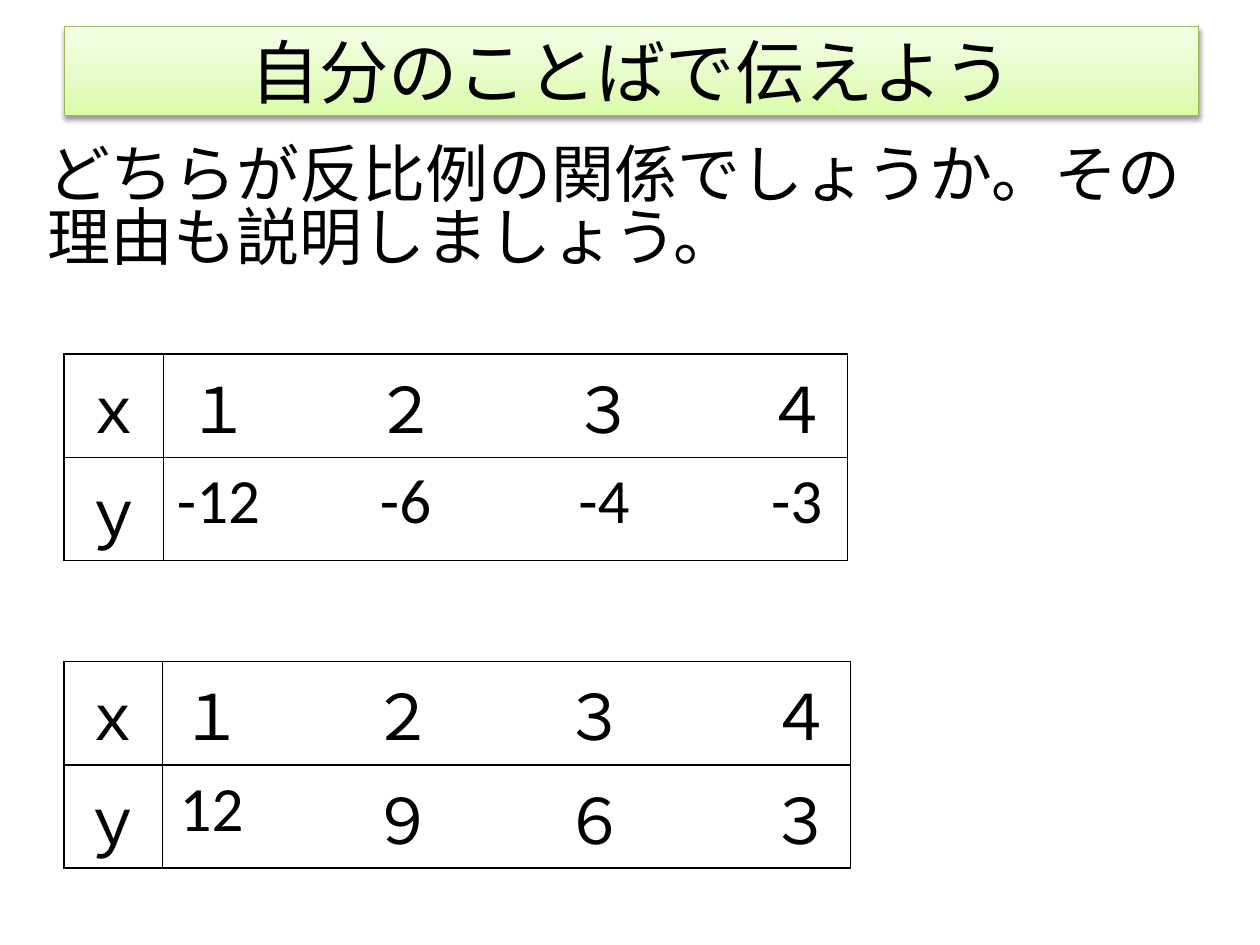
"""Build a slide that asks which of two tables shows inverse proportion."""
from dataclasses import dataclass

from lxml.etree import SubElement
from pptx import Presentation
from pptx.dml.color import RGBColor
from pptx.enum.text import MSO_ANCHOR, PP_ALIGN
from pptx.oxml.ns import qn
from pptx.util import Inches, Pt

BLACK = "000000"
WHITE = "FFFFFF"
ROW_HEIGHT = 0.82


@dataclass
class ValueTable:
    top: float
    widths: list[float]
    y_values: list[str]


TABLES = [
    ValueTable(2.81, [0.79, 0.87, 0.69, 0.72, 0.81, 0.81, 0.72, 0.81],
               ["-12", "-6", "-4", "-3"]),
    ValueTable(5.25, [0.78, 0.78, 0.78, 0.7, 0.78, 0.78, 0.86, 0.78],
               ["12", "９", "６", "３"]),
]


def rgb(color: str) -> RGBColor:
    return RGBColor.from_string(color)


def write(frame, text: str, *, size: float = 36, align=PP_ALIGN.CENTER,
          spacing: float = 1.0) -> None:
    paragraph = frame.paragraphs[0]
    paragraph.alignment = align
    paragraph.line_spacing = spacing
    run = paragraph.add_run()
    run.text = text
    run.font.size = Pt(size)
    run.font.name = "Calibri"
    run.font.color.rgb = rgb(BLACK)


def place(shape, left: float, top: float, width: float, height: float) -> None:
    shape.left, shape.top = Inches(left), Inches(top)
    shape.width, shape.height = Inches(width), Inches(height)


def add_color(parent, color: str):
    return SubElement(parent, qn("a:srgbClr"), val=color)


def style_banner(banner) -> None:
    banner.fill.gradient()
    banner.fill.gradient_angle = 90
    banner.line.color.rgb = rgb("98B955")
    banner.line.width = Pt(0.75)
    properties = banner._element.spPr
    stops = properties.find(".//" + qn("a:gsLst"))
    for stop in list(stops):
        stops.remove(stop)
    for percent, color in ((0, "DAFDA7"), (35, "E4FCC2"), (100, "F5FFE7")):
        add_color(SubElement(stops, qn("a:gs"), pos=str(percent * 1000)), color)
    effects = SubElement(properties, qn("a:effectLst"))
    shadow = SubElement(effects, qn("a:outerShdw"), blurRad=str(Pt(3.1)),
                        dist=str(Pt(1.6)), dir="5400000", rotWithShape="0")
    SubElement(add_color(shadow, BLACK), qn("a:alpha"), val="38000")


def style_cell(cell, column: int, last: int) -> None:
    visible = {"L": column <= 1, "R": column in (0, last), "T": True, "B": True}
    properties = cell._tc.get_or_add_tcPr()
    for side, shown in visible.items():
        border = SubElement(properties, qn(f"a:ln{side}"), w=str(Pt(1)))
        if shown:
            add_color(SubElement(border, qn("a:solidFill")), BLACK)
        else:
            SubElement(border, qn("a:noFill"))
    cell.fill.solid()
    cell.fill.fore_color.rgb = rgb(WHITE)


def add_value_table(slide, values: ValueTable) -> None:
    rows = [["ｘ", "１", "２", "３", "４"], ["ｙ", *values.y_values]]
    last = len(values.widths) - 1
    table = slide.shapes.add_table(
        len(rows), len(values.widths), Inches(0.51), Inches(values.top),
        Inches(sum(values.widths)), Inches(ROW_HEIGHT * len(rows))).table
    table.first_row = table.horz_banding = False
    for column, width in zip(table.columns, values.widths):
        column.width = Inches(width)
    for row, (label, *numbers) in enumerate(rows):
        table.rows[row].height = Inches(ROW_HEIGHT)
        for column in range(last + 1):
            style_cell(table.cell(row, column), column, last)
        write(table.cell(row, 0).text_frame, label)
        for index, number in enumerate(numbers):
            write(table.cell(row, 2 * index + 1).text_frame, number)


def main() -> None:
    presentation = Presentation()
    presentation.slide_width, presentation.slide_height = Inches(10), Inches(7.5)
    slide = presentation.slides.add_slide(presentation.slide_layouts[5])

    title = slide.shapes.title
    place(title, 0.51, 0.21, 9, 0.71)
    style_banner(title)
    title.text_frame.vertical_anchor = MSO_ANCHOR.MIDDLE
    write(title.text_frame, "自分のことばで伝えよう", size=39.6)

    question = slide.shapes.add_textbox(
        Inches(0.28), Inches(1.07), Inches(9.45), Inches(1.34)).text_frame
    question.word_wrap = True
    question.margin_top = Inches(0.1)
    write(question, "どちらが反比例の関係でしょうか。その理由も説明しましょう。",
          align=PP_ALIGN.LEFT, spacing=0.83)

    for values in TABLES:
        add_value_table(slide, values)
    presentation.save("out.pptx")


if __name__ == "__main__":
    main()
